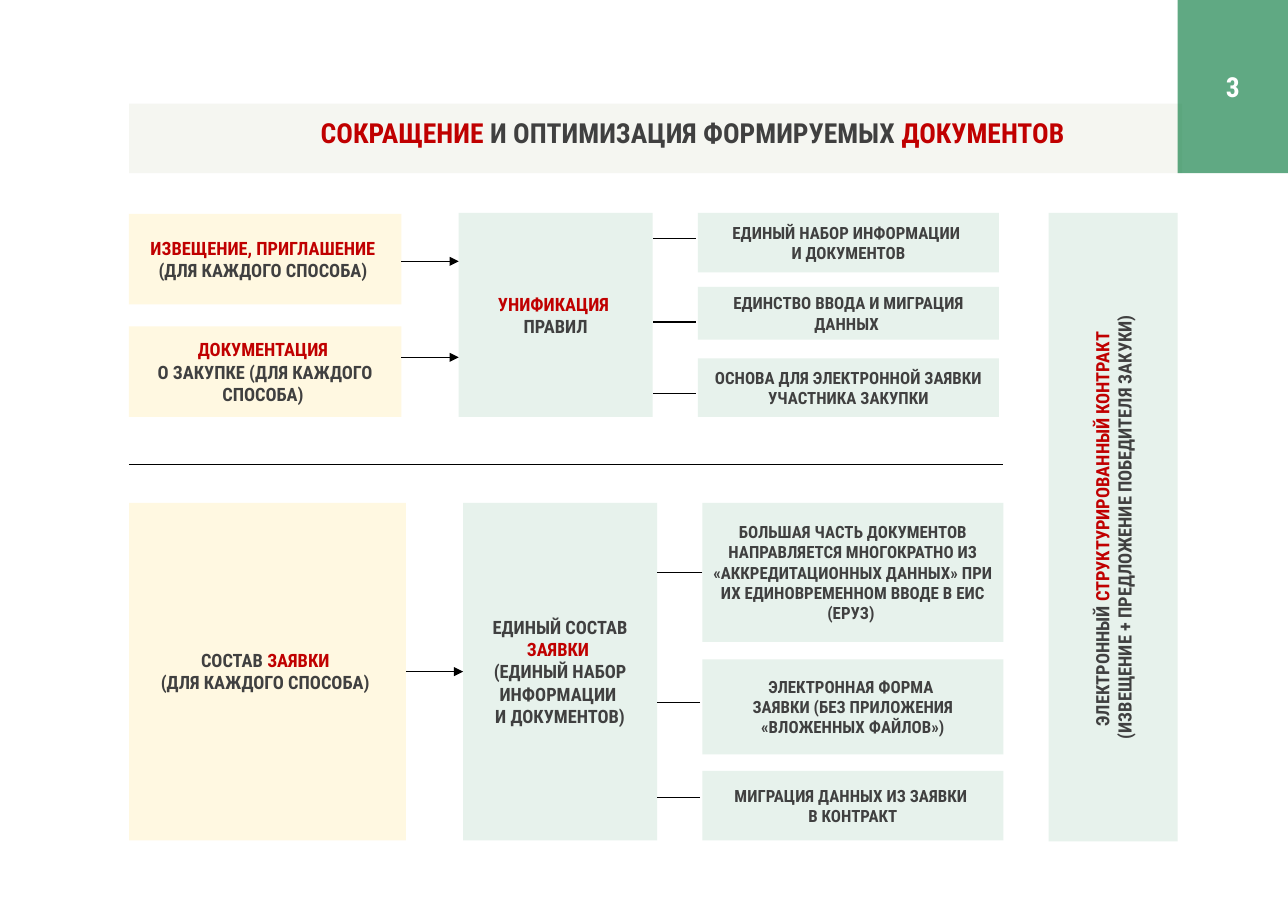
from collections import namedtuple
from dataclasses import dataclass

from lxml import etree
from pptx import Presentation
from pptx.dml.color import RGBColor as RGB
from pptx.enum.shapes import MSO_CONNECTOR as Conn, MSO_SHAPE as Shape
from pptx.enum.text import MSO_ANCHOR as Anchor, PP_ALIGN as Align
from pptx.oxml.ns import qn
from pptx.util import Inches, Pt


@dataclass(frozen=True)
class Theme:
    font: str = "Roboto Condensed"
    dark: str = "404040"
    accent: str = "C00000"
    white: str = "FFFFFF"
    line: str = "000000"
    band: str = "F5F6F1"
    cream: str = "FFF8E1"
    mint: str = "E7F2EC"
    green: str = "077A3E"
    green_alpha: int = 64000
    title: int = 18
    body: int = 12
    small: int = 11
    rule: float = 0.75


T = Theme()
Box = namedtuple("Box", "x y w h")
Part = namedtuple("Part", "dy h text link_dy", defaults=[None])
LEFT, RIGHT = 1, 3


def write(tf, text, size, color=T.dark):
    tf.word_wrap = True
    p = tf.paragraphs[0]
    p.alignment = Align.CENTER
    for i, span in enumerate(text.split("*")):
        for j, line in enumerate(span.split("\n")):
            if j:
                p.add_line_break()
            if line:
                r = p.add_run()
                r.text = line
                r.font.name, r.font.size, r.font.bold = T.font, Pt(size), True
                r.font.color.rgb = RGB.from_string(T.accent if i % 2 else color)


def panel(s, box, fill, text="", size=T.body, color=T.dark):
    sp = s.shapes.add_shape(Shape.RECTANGLE, *map(Inches, box))
    sp.shadow.inherit = False
    sp.fill.solid()
    sp.fill.fore_color.rgb = RGB.from_string(fill)
    sp.line.fill.background()
    if text:
        sp.text_frame.vertical_anchor = Anchor.MIDDLE
        write(sp.text_frame, text, size, color)
    return sp


def rule(s, x1, x2, y, arrow=False):
    c = s.shapes.add_connector(Conn.STRAIGHT, *map(Inches, (x1, y, x2, y)))
    c.line.color.rgb = RGB.from_string(T.line)
    c.line.width = Pt(T.rule)
    if arrow:
        etree.SubElement(c.line._get_or_add_ln(), qn("a:tailEnd"), type="triangle")
    etree.SubElement(c.element.spPr, qn("a:effectLst"))
    return c


def header(s, box):
    panel(s, box, T.band)
    tb = s.shapes.add_textbox(*map(Inches, (box.x + 0.97, box.y + 0.06, 8.28, 0.4)))
    write(tb.text_frame, "*СОКРАЩЕНИЕ *И ОПТИМИЗАЦИЯ ФОРМИРУЕМЫХ *ДОКУМЕНТОВ*", T.title)


def page_number(s, box):
    sp = panel(s, box, T.green, "3", T.title, T.white)
    rgb = sp.element.spPr.find(qn("a:solidFill")).find(qn("a:srgbClr"))
    etree.SubElement(rgb, qn("a:alpha"), val=str(T.green_alpha))


def flow(s, box, sources, hub_text, results):
    result_w, link_w, hub_w, arrow_w = 2.73, 0.41, 1.76, 0.52
    result_x = box.x + box.w - result_w
    hub_x = result_x - link_w - hub_w
    source_w = hub_x - arrow_w - box.x
    hub = panel(s, Box(hub_x, box.y, hub_w, box.h), T.mint, hub_text)

    for part in sources:
        sp = panel(s, Box(box.x, box.y + part.dy, source_w, part.h), T.cream, part.text)
        middle = part.dy + part.h / 2
        link_dy = middle if part.link_dy is None else part.link_dy
        c = rule(s, hub_x - arrow_w, hub_x, box.y + link_dy, arrow=True)
        if part.link_dy is None:
            c.begin_connect(sp, RIGHT)
        if link_dy == box.h / 2:
            c.end_connect(hub, LEFT)

    for part in results:
        sp = panel(s, Box(result_x, box.y + part.dy, result_w, part.h),
                   T.mint, part.text, T.small)
        link_dy = part.h / 2 + part.dy if part.link_dy is None else part.link_dy
        c = rule(s, result_x - 0.02, hub_x + hub_w, box.y + link_dy)
        if part.link_dy is None:
            c.begin_connect(sp, LEFT)


def contract(s, box):
    sp = panel(s, box, T.mint,
               "ЭЛЕКТРОННЫЙ *СТРУКТУРИРОВАННЫЙ КОНТРАКТ \n*"
               "(ИЗВЕЩЕНИЕ + ПРЕДЛОЖЕНИЕ ПОБЕДИТЕЛЯ ЗАКУКИ)")
    sp.element.txBody.find(qn("a:bodyPr")).set("vert", "vert270")


def main():
    prs = Presentation()
    prs.slide_width, prs.slide_height = Inches(11.68), Inches(8.26)
    s = prs.slides.add_slide(prs.slide_layouts[6])

    header(s, Box(1.17, 0.94, 9.55, 0.63))
    page_number(s, Box(10.68, -0.01, 1, 1.58))
    flow(
        s, Box(1.17, 1.93, 7.89, 1.85),
        [Part(0.01, 0.82, "*ИЗВЕЩЕНИЕ, ПРИГЛАШЕНИЕ \n*(ДЛЯ КАЖДОГО СПОСОБА) ", 0.44),
         Part(1.03, 0.82, "*ДОКУМЕНТАЦИЯ \n*О ЗАКУПКЕ (ДЛЯ КАЖДОГО СПОСОБА) ", 1.31)],
        "*УНИФИКАЦИЯ \n*ПРАВИЛ",
        [Part(0, 0.54, "ЕДИНЫЙ НАБОР ИНФОРМАЦИИ \nИ ДОКУМЕНТОВ", 0.23),
         Part(0.67, 0.48, "ЕДИНСТВО ВВОДА И МИГРАЦИЯ ДАННЫХ ", 0.99),
         Part(1.32, 0.53, "ОСНОВА ДЛЯ ЭЛЕКТРОННОЙ ЗАЯВКИ УЧАСТНИКА ЗАКУПКИ", 1.64)],
    )
    rule(s, 1.17, 9.1, 4.21)
    flow(
        s, Box(1.17, 4.56, 7.93, 3.06),
        [Part(0, 3.06, "СОСТАВ *ЗАЯВКИ \n*(ДЛЯ КАЖДОГО СПОСОБА) ")],
        "ЕДИНЫЙ СОСТАВ *ЗАЯВКИ \n*(ЕДИНЫЙ НАБОР ИНФОРМАЦИИ \nИ ДОКУМЕНТОВ)",
        [Part(0, 1.26, "БОЛЬШАЯ ЧАСТЬ ДОКУМЕНТОВ НАПРАВЛЯЕТСЯ МНОГОКРАТНО ИЗ "
                       "«АККРЕДИТАЦИОННЫХ ДАННЫХ» ПРИ ИХ ЕДИНОВРЕМЕННОМ ВВОДЕ "
                       "В ЕИС (ЕРУЗ) "),
         Part(1.42, 0.86, "ЭЛЕКТРОННАЯ ФОРМА \nЗАЯВКИ (БЕЗ ПРИЛОЖЕНИЯ «ВЛОЖЕННЫХ ФАЙЛОВ»)", 1.81),
         Part(2.43, 0.63, "МИГРАЦИЯ ДАННЫХ ИЗ ЗАЯВКИ \nВ КОНТРАКТ", 2.67)],
    )
    contract(s, Box(9.51, 1.93, 1.17, 5.7))
    prs.save("out.pptx")


if __name__ == "__main__":
    main()
